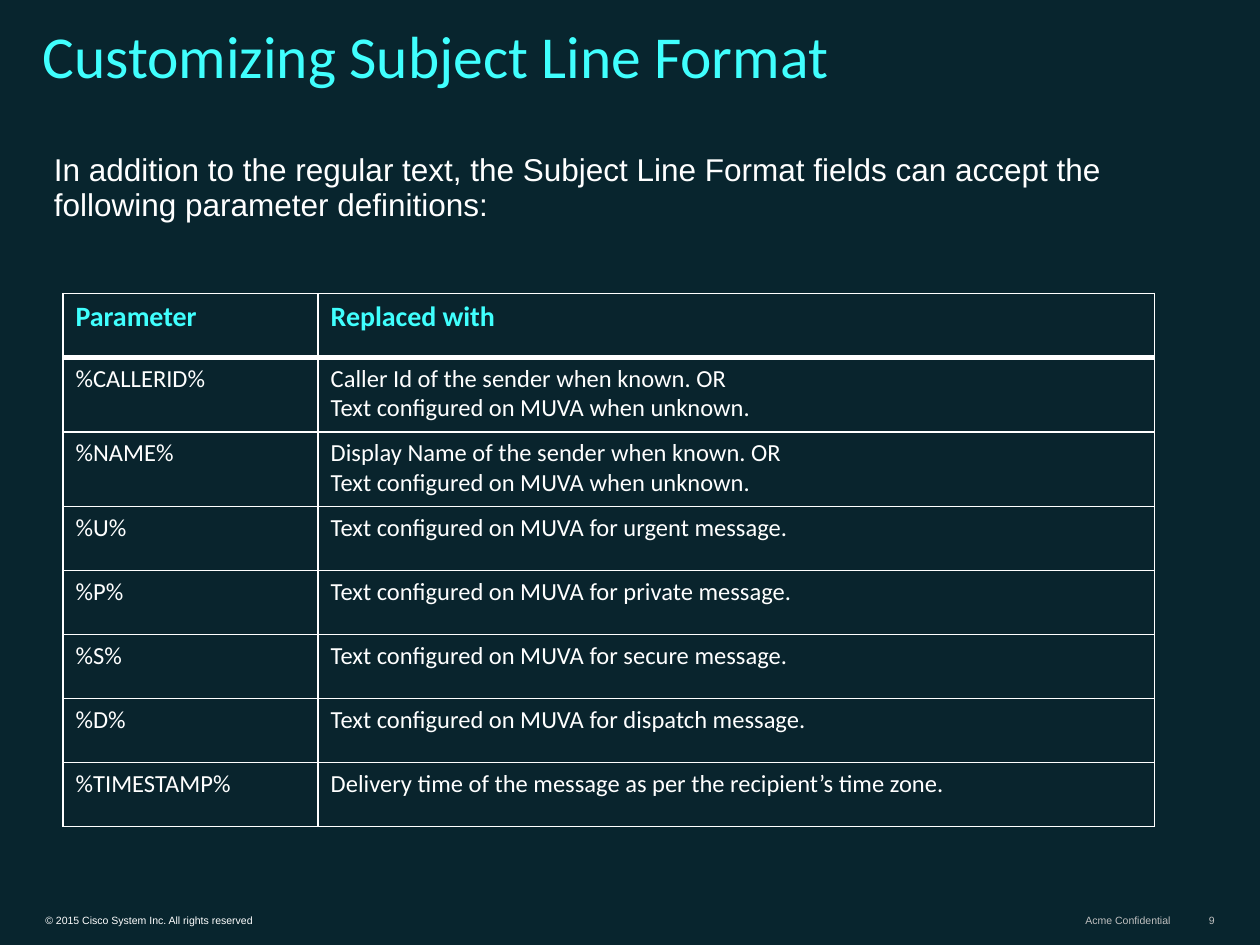
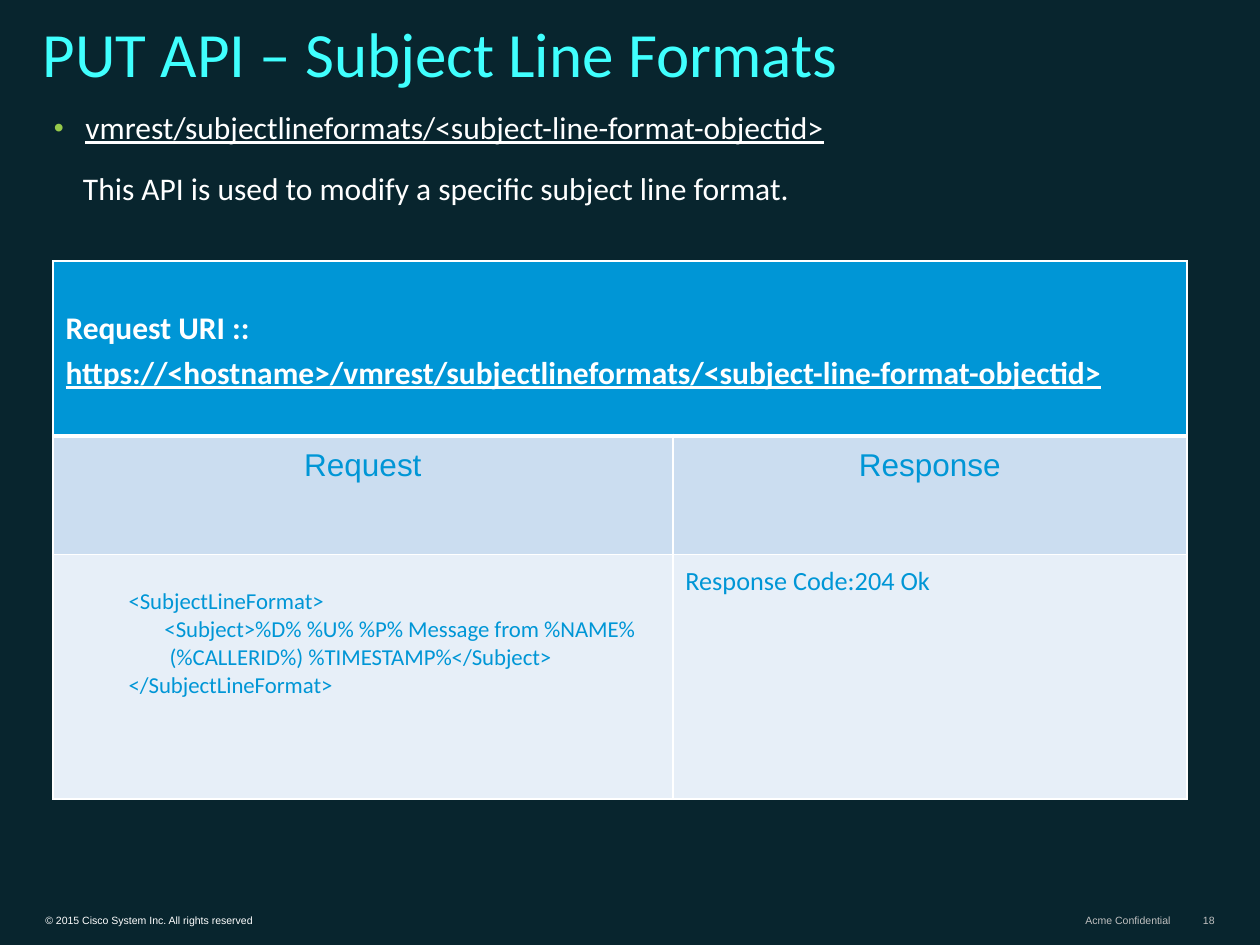
from lxml import etree
from pptx import Presentation
from pptx.dml.color import RGBColor
from pptx.enum.text import MSO_ANCHOR as ANCHOR, PP_ALIGN as ALIGN
from pptx.oxml.ns import qn
from pptx.util import Inches, Pt

BACKGROUND, AQUA, WHITE, GREY = "08252E", "40FFFE", "FFFFFF", "C0C0C0"
DARK_CELL, BLUE, PALE_BLUE, PALEST_BLUE = "09242D", "0096D6", "CBDDF0", "E7EFF8"
LIME = "96CA4B"
HEAVY, THIN = 3, 1

deck = Presentation()
deck.slide_width, deck.slide_height = Inches(10), Inches(7.5)
# Grid of 100 columns by 75 rows
COL, ROW = deck.slide_width // 100, deck.slide_height // 75


def write(frame, text, size, color, font="Calibri", bold=False,
          underline=False, align=ALIGN.LEFT, spacing=1.0):
    """Put text in a frame, one paragraph per line, all in one style."""
    frame.text = text
    for paragraph in frame.paragraphs:
        paragraph.alignment = align
        paragraph.line_spacing = spacing
        for run in paragraph.runs:
            run.font.name, run.font.size = font, Pt(size)
            run.font.bold, run.font.underline = bold, underline
            run.font.color.rgb = RGBColor.from_string(color)


def paint_cell(cell, fill, top=THIN, bottom=THIN):
    """Give a cell its fill and white borders of the given point widths."""
    properties = cell._tc.get_or_add_tcPr()
    for side, width in (("L", THIN), ("R", THIN), ("T", top), ("B", bottom)):
        line = etree.SubElement(properties, qn(f"a:ln{side}"), w=str(Pt(width)))
        solid = etree.SubElement(line, qn("a:solidFill"))
        etree.SubElement(solid, qn("a:srgbClr"), val=WHITE)
    cell.fill.solid()
    cell.fill.fore_color.rgb = RGBColor.from_string(fill)


# Shared frame: background, title and footer
slides = []
for title, title_size, number in (
    ("Customizing Subject Line Format", 34, "9"),
    ("PUT API – Subject Line Formats", 36, "18"),
):
    slide = deck.slides.add_slide(deck.slide_layouts[6])
    slide.background.fill.solid()
    slide.background.fill.fore_color.rgb = RGBColor.from_string(BACKGROUND)
    for left, top, width, height, text, style in (
        (2.5, -1.7, 96, 9.2, title,
         dict(size=title_size, color=AQUA, spacing=0.8)),
        (2.7, 72, 37.4, 1.9, "© 2015 Cisco System Inc. All rights reserved",
         dict(size=6, color=WHITE, font="Arial")),
        (84.9, 72, 8.9, 1.9, "Acme Confidential",
         dict(size=6, color=GREY, font="Arial", align=ALIGN.RIGHT)),
        (94.5, 72, 2.8, 1.9, number,
         dict(size=6, color=GREY, font="Arial", align=ALIGN.RIGHT)),
    ):
        frame = slide.shapes.add_textbox(
            int(left * COL), int(top * ROW), int(width * COL), int(height * ROW)).text_frame
        frame.word_wrap = style.get("align") != ALIGN.RIGHT
        frame.vertical_anchor = ANCHOR.BOTTOM
        frame.margin_left = frame.margin_right = Inches(0.09)
        frame.margin_top = frame.margin_bottom = Inches(0.04)
        write(frame, text, **style)
    slides.append(slide)
parameters_slide, put_slide = slides

# Parameter definitions
intro = parameters_slide.shapes.add_textbox(
    int(3.3 * COL), int(11.6 * ROW), 95 * COL, int(11.7 * ROW)).text_frame
intro.word_wrap = True
write(intro, "In addition to the regular text, the Subject Line Format fields "
      "can accept the following parameter definitions:",
      18, WHITE, font="Arial", spacing=0.95)

definitions = [
    ("Parameter", "Replaced with"),
    ("%CALLERID%", "Caller Id of the sender when known. OR\n"
                   "Text configured on MUVA when unknown."),
    ("%NAME%", "Display Name of the sender when known. OR\n"
               "Text configured on MUVA when unknown."),
    ("%U%", "Text configured on MUVA for urgent message."),
    ("%P%", "Text configured on MUVA for private message."),
    ("%S%", "Text configured on MUVA for secure message."),
    ("%D%", "Text configured on MUVA for dispatch message."),
    ("%TIMESTAMP%", "Delivery time of the message as per the recipient’s time zone."),
]
parameters = parameters_slide.shapes.add_table(
    len(definitions), 2, 5 * COL, int(23.3 * ROW),
    int(86.7 * COL), int(42.3 * ROW)).table
parameters.columns[0].width = int(20.25 * COL)
parameters.columns[1].width = int(66.4 * COL)
for r, definition in enumerate(definitions):
    two_lines = "\n" in definition[1]
    parameters.rows[r].height = int((5.92 if two_lines else 5.08) * ROW)
    header = r == 0
    for c, text in enumerate(definition):
        cell = parameters.cell(r, c)
        paint_cell(cell, DARK_CELL, top=HEAVY if r == 1 else THIN,
                   bottom=HEAVY if header else THIN)
        write(cell.text_frame, text, 16 if header else 14,
              AQUA if header else WHITE, bold=header)

# PUT request: resource and purpose
resource = put_slide.shapes.add_textbox(
    int(3.3 * COL), int(8.3 * ROW), int(93.5 * COL), int(12.5 * ROW)).text_frame
resource.word_wrap = True
write(resource, "vmrest/subjectlineformats/<subject-line-format-objectid>\n"
      "This API is used to modify a specific subject line format.",
      18, WHITE, spacing=0.95)
address, purpose = resource.paragraphs
address.runs[0].font.underline = True
bullet = address._p.get_or_add_pPr()
bullet.set("marL", str(Inches(0.25)))
bullet.set("indent", str(-Inches(0.25)))
bullet_color = etree.SubElement(bullet, qn("a:buClr"))
etree.SubElement(bullet_color, qn("a:srgbClr"), val=LIME)
etree.SubElement(bullet, qn("a:buSzPct"), val="90000")
etree.SubElement(bullet, qn("a:buFont"), typeface="Arial")
etree.SubElement(bullet, qn("a:buChar"), char="•")
purpose.space_before = Pt(14.4)
purpose._p.get_or_add_pPr().set("marL", str(Inches(0.23)))

# PUT request: URI, request and response
call = put_slide.shapes.add_table(
    3, 2, int(4.2 * COL), int(20.7 * ROW), 90 * COL, int(42.7 * ROW)).table
for column, width in zip(call.columns, (49.2, 40.8)):
    column.width = int(width * COL)
for row, height in zip(call.rows, (13.9, 9.4, 19.4)):
    row.height = int(height * ROW)
for c in range(2):
    paint_cell(call.cell(0, c), BLUE, bottom=HEAVY)
    paint_cell(call.cell(1, c), PALE_BLUE, top=HEAVY)
    paint_cell(call.cell(2, c), PALEST_BLUE)
    write(call.cell(1, c).text_frame, ("Request", "Response")[c], 18, BLUE,
          font="Arial", align=ALIGN.CENTER, spacing=1.15)

uri = call.cell(0, 0)
uri.merge(call.cell(0, 1))
uri.vertical_anchor = ANCHOR.MIDDLE
write(uri.text_frame, "Request URI ::\n"
      "https://<hostname>/vmrest/subjectlineformats/<subject-line-format-objectid>",
      18, WHITE, bold=True, spacing=1.15)
uri.text_frame.paragraphs[1].runs[0].font.underline = True

request_body = call.cell(2, 0)
request_body.margin_left, request_body.margin_top = Inches(0.6), Inches(0.27)
write(request_body.text_frame, """<SubjectLineFormat>
       <Subject>%D% %U% %P% Message from %NAME%
        (%CALLERID%) %TIMESTAMP%</Subject>
</SubjectLineFormat>""", 13, BLUE)
write(call.cell(2, 1).text_frame, "Response Code:204 Ok", 15, BLUE, spacing=1.15)

deck.save("out.pptx")
